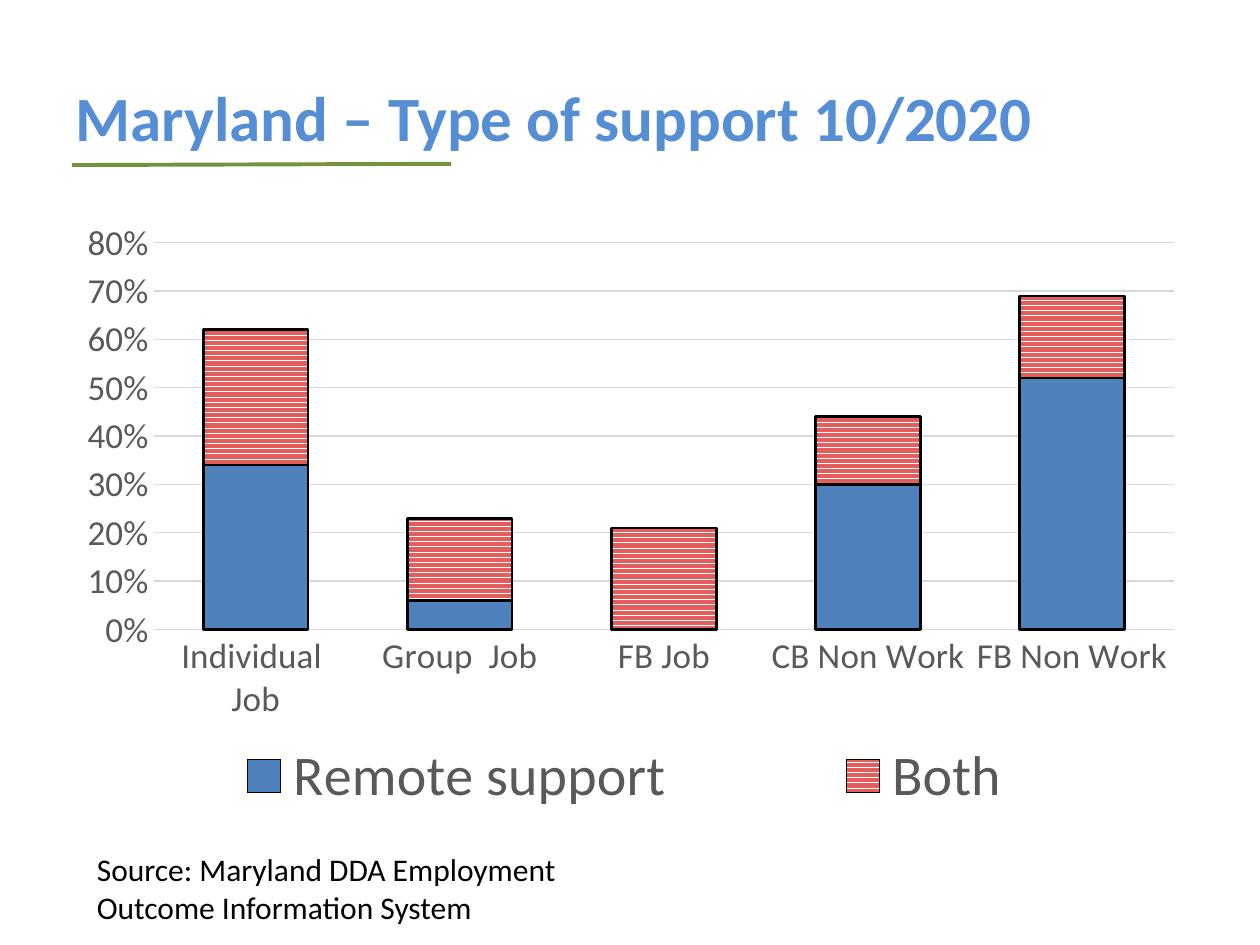
from dataclasses import dataclass

import pptx
import pptx.chart.data
import pptx.dml.color
import pptx.enum.chart
import pptx.enum.dml
import pptx.enum.shapes
import pptx.enum.text
import pptx.oxml
import pptx.oxml.ns
import pptx.util
from pptx.util import Inches

FONT = "Calibri"
COLORS = {
    "title": "558ED5", "rule": "76923C", "text": "000000", "label": "595959",
    "grid": "D9D9D9", "remote": "4F81BD", "both": "E45C5C", "white": "FFFFFF",
}
CATEGORIES = ["Individual  Job", "Group  Job", "FB Job", "CB Non Work", "FB Non Work"]


@dataclass
class SupportType:
    name: str
    color: str
    values: tuple
    striped: bool = False


SUPPORT_TYPES = [
    SupportType("Remote support", "remote", (0.34, 0.06, 0, 0.3, 0.52)),
    SupportType("Both", "both", (0.28, 0.17, 0.21, 0.14, 0.17), striped=True),
]


def rgb(name: str) -> pptx.dml.color.RGBColor:
    return pptx.dml.color.RGBColor.from_string(COLORS[name])


def style_font(font, size: float, color: str, bold: bool = False) -> None:
    font.name, font.size, font.bold = FONT, pptx.util.Pt(size), bold
    font.color.rgb = rgb(color)


def style_line(line, color: str, width: float) -> None:
    line.color.rgb = rgb(color)
    line.width = pptx.util.Pt(width)


def place(parent, x: float, y: float, width: float, height: float, inner: bool = False) -> None:
    """Give a plot area or legend a manual layout in fractions of the chart."""
    for old in parent.findall(pptx.oxml.ns.qn("c:layout")):
        parent.remove(old)
    target = '<c:layoutTarget val="inner"/>' if inner else ""
    layout = pptx.oxml.parse_xml(
        f'<c:layout {pptx.oxml.ns.nsdecls("c")}><c:manualLayout>{target}'
        '<c:xMode val="edge"/><c:yMode val="edge"/>'
        f'<c:x val="{x}"/><c:y val="{y}"/><c:w val="{width}"/><c:h val="{height}"/>'
        "</c:manualLayout></c:layout>")
    parent.insert(0 if inner else 1, layout)


def fill_series(series, support: SupportType) -> None:
    fill = series.format.fill
    if support.striped:
        fill.patterned()
        fill.pattern = pptx.enum.dml.MSO_PATTERN.DARK_HORIZONTAL
        fill.fore_color.rgb = rgb(support.color)
        fill.back_color.rgb = rgb("white")
    else:
        fill.solid()
        fill.fore_color.rgb = rgb(support.color)
    series.invert_if_negative = False
    style_line(series.format.line, "text", 1.5)


def add_title(page) -> None:
    title = page.shapes.title
    title.left, title.top = Inches(0.5), Inches(0.3)
    title.width, title.height = Inches(9), Inches(1.25)
    title.text_frame.text = "Maryland – Type of support 10/2020"
    title.text_frame.vertical_anchor = pptx.enum.text.MSO_ANCHOR.MIDDLE
    para = title.text_frame.paragraphs[0]
    para.alignment = pptx.enum.text.PP_ALIGN.LEFT
    style_font(para.font, 36, "title", bold=True)


def add_title_rule(page) -> None:
    rule = page.shapes.add_connector(
        pptx.enum.shapes.MSO_CONNECTOR.STRAIGHT,
        Inches(0.57), Inches(1.31), Inches(3.58), Inches(1.3))
    style_line(rule.line, "rule", 2.25)
    rule._element.spPr.append(
        pptx.oxml.parse_xml(f'<a:effectLst {pptx.oxml.ns.nsdecls("a")}/>'))


def add_support_chart(page) -> None:
    data = pptx.chart.data.CategoryChartData(number_format="0%")
    data.categories = CATEGORIES
    for support in SUPPORT_TYPES:
        data.add_series(support.name, support.values)
    chart = page.shapes.add_chart(
        pptx.enum.chart.XL_CHART_TYPE.COLUMN_STACKED,
        Inches(0.5), Inches(1.68), Inches(9), Inches(4.95), data).chart
    style_font(chart.font, 10, "text")
    chart.has_title = False

    plot = chart.plots[0]
    plot.gap_width, plot.overlap, plot.vary_by_categories = 95, 100, False
    for series, support in zip(plot.series, SUPPORT_TYPES):
        fill_series(series, support)

    for axis in (chart.category_axis, chart.value_axis):
        axis.major_tick_mark = pptx.enum.chart.XL_TICK_MARK.NONE
        axis.minor_tick_mark = pptx.enum.chart.XL_TICK_MARK.NONE
        style_font(axis.tick_labels.font, 20, "label")
    style_line(chart.category_axis.format.line, "grid", 0.75)
    values = chart.value_axis
    values.minimum_scale, values.maximum_scale, values.major_unit = 0, 0.8, 0.1
    values.tick_labels.number_format = "0%"
    values.tick_labels.number_format_is_linked = False
    values.format.line.fill.background()
    values.has_major_gridlines = True
    style_line(values.major_gridlines.format.line, "grid", 0.75)

    chart.has_legend = True
    chart.legend.position = pptx.enum.chart.XL_LEGEND_POSITION.BOTTOM
    chart.legend.include_in_layout = False
    style_font(chart.legend.font, 32, "label")
    place(chart._chartSpace.chart.plotArea, 0.08, 0.05, 0.9, 0.62, inner=True)
    place(chart.legend._element, 0.02, 0.84, 0.95, 0.13)


def add_source(page) -> None:
    box = page.shapes.add_textbox(Inches(0.67), Inches(6.7), Inches(7.08), Inches(0.71))
    box.text_frame.word_wrap = True
    box.text_frame.auto_size = pptx.enum.text.MSO_AUTO_SIZE.SHAPE_TO_FIT_TEXT
    para = box.text_frame.paragraphs[0]
    para.text = "Source: Maryland DDA Employment \vOutcome Information System"
    style_font(para.font, 18, "text")


def main() -> None:
    deck = pptx.Presentation()
    deck.slide_width, deck.slide_height = Inches(10), Inches(7.5)
    page = deck.slides.add_slide(deck.slide_layouts[5])
    add_title(page)
    add_support_chart(page)
    add_source(page)
    add_title_rule(page)
    deck.save("out.pptx")


if __name__ == "__main__":
    main()
